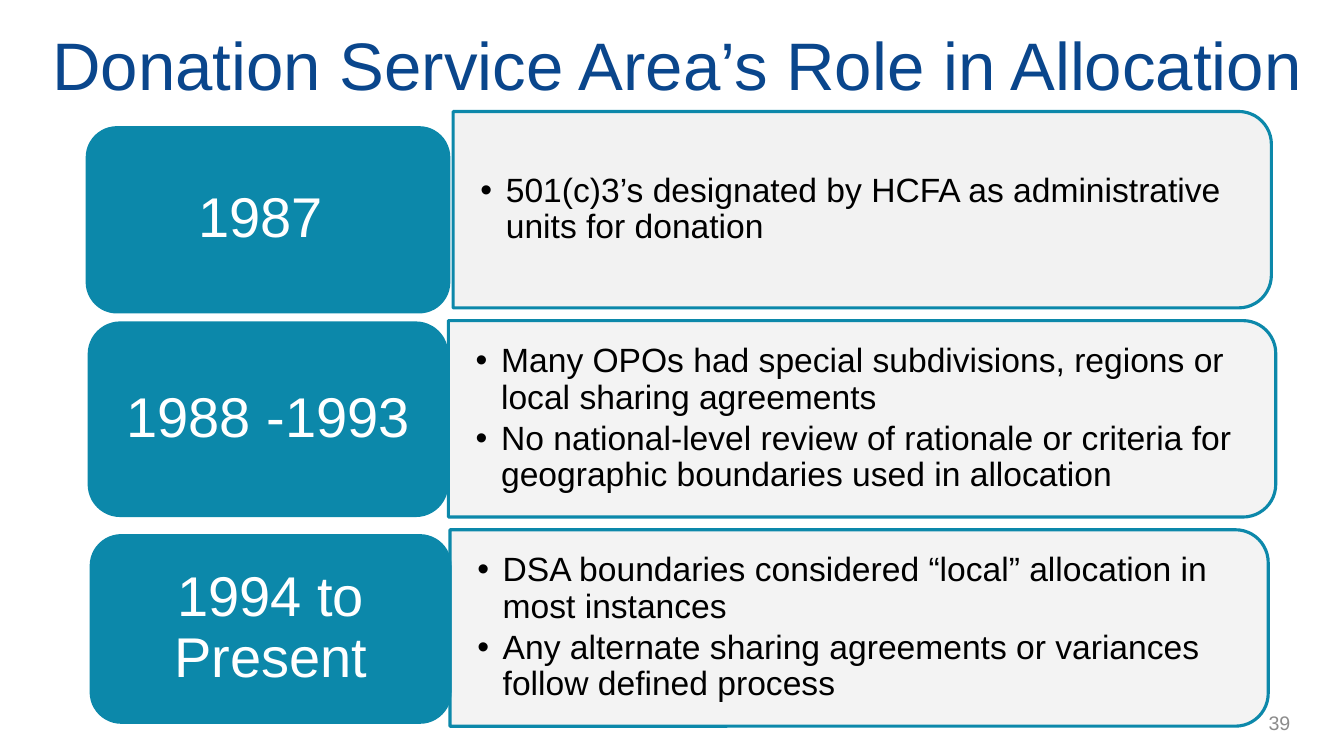
from dataclasses import dataclass

from lxml.etree import SubElement
from pptx import Presentation
from pptx.dml.color import RGBColor
from pptx.enum.shapes import MSO_SHAPE
from pptx.enum.text import MSO_ANCHOR, MSO_AUTO_SIZE, PP_ALIGN
from pptx.oxml.ns import qn
from pptx.util import Cm, Pt


@dataclass(frozen=True)
class Theme:
    font: str = "Arial"
    navy: RGBColor = RGBColor(0x0A, 0x46, 0x8C)
    teal: RGBColor = RGBColor(0x0C, 0x88, 0xAA)
    panel: RGBColor = RGBColor(0xF2, 0xF2, 0xF2)
    black: RGBColor = RGBColor(0, 0, 0)
    white: RGBColor = RGBColor(0xFF, 0xFF, 0xFF)
    grey: RGBColor = RGBColor(0x8C, 0x8C, 0x8C)
    title_size: int = 48
    period_size: int = 40
    body_size: int = 24
    number_size: int = 14


@dataclass(frozen=True)
class Era:
    """One timeline row; label and panel measures are in centimetres."""
    period: str
    points: tuple
    label: tuple
    panel_left: float
    panel_width: float
    opacity: int


THEME = Theme()
FIRST_PANEL_TOP, PANEL_PITCH, PANEL_HEIGHT = 2.81, 5.27, 4.95
TEXT_INSET = 0.24

ERAS = (
    Era("1987 ",
        ("501(c)3’s designated by HCFA as administrative units for donation",),
        (2.16, 3.18, 9.19, 4.72), 11.42, 20.62, 100),
    Era("1988 -1993",
        ("Many OPOs had special subdivisions, regions or local sharing agreements",
         "No national-level review of rationale or criteria for geographic "
         "boundaries used in allocation"),
        (2.21, 8.1, 9.09, 4.93), 11.3, 20.85, 90),
    Era("1994 to Present",
        ("DSA boundaries considered “local” allocation in most instances",
         "Any alternate sharing agreements or variances follow defined process"),
        (2.26, 13.46, 9.12, 4.78), 11.34, 20.62, 90),
)


def format_para(para, size, color, align=PP_ALIGN.LEFT):
    para.alignment = align
    for span in para.runs:
        span.font.name = THEME.font
        span.font.size = Pt(size)
        span.font.color.rgb = color


def prepare_frame(frame, side=0.25, edge=0.13):
    """Wrap and centre the text vertically, with margins in centimetres."""
    frame.word_wrap = True
    frame.auto_size = MSO_AUTO_SIZE.NONE
    frame.vertical_anchor = MSO_ANCHOR.MIDDLE
    frame.margin_left = frame.margin_right = Cm(side)
    frame.margin_top = frame.margin_bottom = Cm(edge)


def add_bullet(para):
    properties = para._p.get_or_add_pPr()
    properties.set("marL", str(Cm(0.64)))
    properties.set("indent", str(-Cm(0.64)))
    SubElement(properties, qn("a:buFont"), typeface=THEME.font)
    SubElement(properties, qn("a:buChar"), char="•")


def set_opacity(shape, percent):
    color = shape.fill._xPr.find(qn("a:solidFill"))[0]
    SubElement(color, qn("a:alpha"), val=str(percent * 1000))


def add_title(page, text):
    title = page.shapes.title
    title.left, title.top, title.width, title.height = (
        Cm(1.07), Cm(0.43), Cm(32.39), Cm(2.36))
    title.text_frame.text = text
    prepare_frame(title.text_frame)
    format_para(title.text_frame.paragraphs[0], THEME.title_size, THEME.navy)


def add_panel(page, era, top):
    """Draw a panel rounded on the right: a top-rounded shape turned a quarter."""
    middle_x = era.panel_left + era.panel_width / 2
    middle_y = top + PANEL_HEIGHT / 2
    panel = page.shapes.add_shape(
        MSO_SHAPE.ROUND_2_SAME_RECTANGLE,
        Cm(middle_x - PANEL_HEIGHT / 2), Cm(middle_y - era.panel_width / 2),
        Cm(PANEL_HEIGHT), Cm(era.panel_width))
    panel.rotation = 90
    panel.shadow.inherit = False
    panel.fill.solid()
    panel.fill.fore_color.rgb = THEME.panel
    if era.opacity < 100:
        set_opacity(panel, era.opacity)
    panel.line.color.rgb = THEME.teal
    panel.line.width = Pt(2.25)


def add_points(page, era, top):
    box = page.shapes.add_textbox(
        Cm(era.panel_left), Cm(top + TEXT_INSET),
        Cm(era.panel_width - TEXT_INSET), Cm(PANEL_HEIGHT - 2 * TEXT_INSET))
    frame = box.text_frame
    prepare_frame(frame, 0.69, 0.36)
    frame.text = "\n".join(era.points)
    for para in frame.paragraphs:
        para.line_spacing = 0.9
        para.space_after = Pt(3.6)
        add_bullet(para)
        format_para(para, THEME.body_size, THEME.black)


def add_period(page, era):
    label = page.shapes.add_shape(
        MSO_SHAPE.ROUNDED_RECTANGLE, *(Cm(length) for length in era.label))
    label.shadow.inherit = False
    label.fill.solid()
    label.fill.fore_color.rgb = THEME.teal
    label.line.fill.background()
    prepare_frame(label.text_frame, 0.43, 0.2)
    label.text_frame.text = era.period
    para = label.text_frame.paragraphs[0]
    para.line_spacing = 0.9
    format_para(para, THEME.period_size, THEME.white, PP_ALIGN.CENTER)


def add_page_number(page, number):
    box = page.shapes.add_textbox(Cm(27.03), Cm(17.7), Cm(5.74), Cm(1.02))
    prepare_frame(box.text_frame)
    box.text_frame.text = number
    format_para(box.text_frame.paragraphs[0], THEME.number_size, THEME.grey,
                PP_ALIGN.RIGHT)


def main():
    deck = Presentation()
    deck.slide_width, deck.slide_height = Cm(33.87), Cm(19.05)
    page = deck.slides.add_slide(deck.slide_layouts.get_by_name("Title Only"))
    add_title(page, "Donation Service Area’s Role in Allocation")
    for row, era in enumerate(ERAS):
        top = FIRST_PANEL_TOP + row * PANEL_PITCH
        add_panel(page, era, top)
        add_points(page, era, top)
        add_period(page, era)
    add_page_number(page, "39")
    deck.save("out.pptx")


if __name__ == "__main__":
    main()
